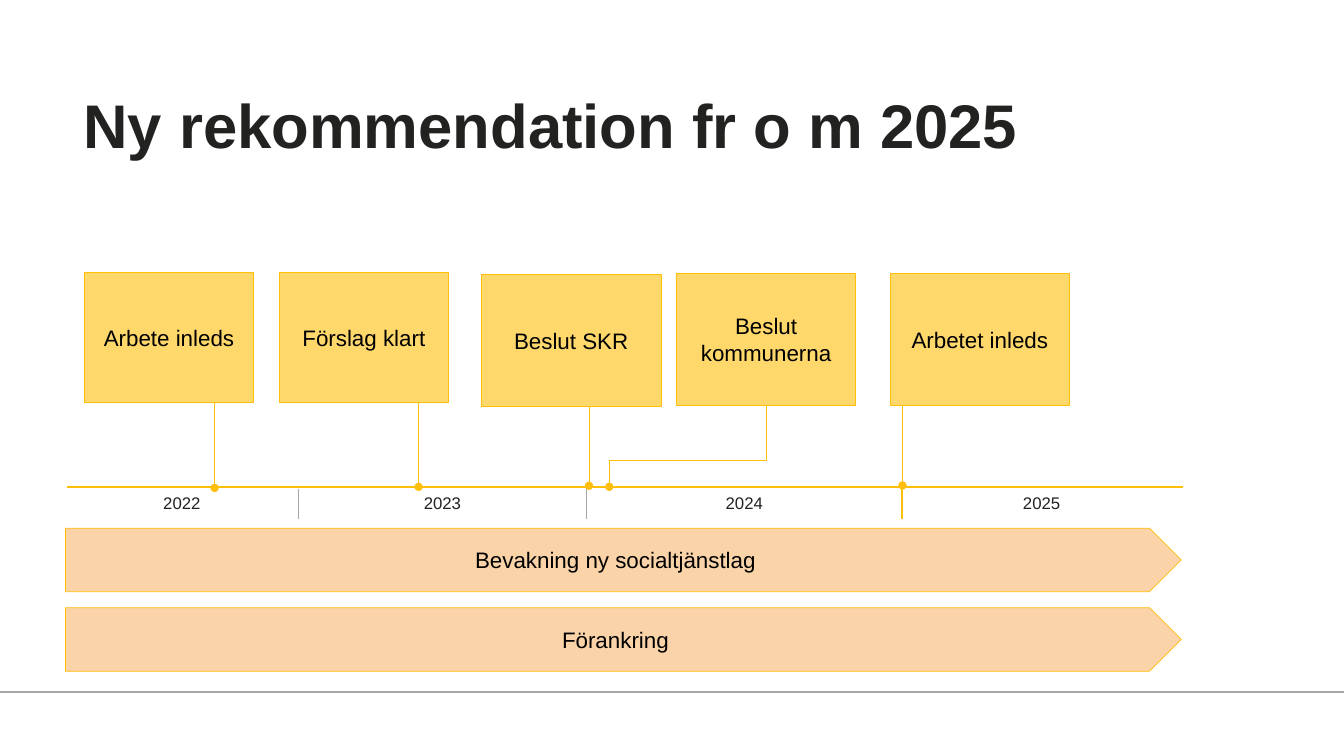
from lxml.etree import SubElement
from pptx import Presentation
from pptx.dml.color import RGBColor
from pptx.enum.shapes import MSO_CONNECTOR, MSO_SHAPE
from pptx.enum.text import MSO_ANCHOR, PP_ALIGN
from pptx.oxml.ns import qn
from pptx.util import Pt

COLORS = {
    "gold": "FFBE0A",
    "yellow": "FFD86C",
    "peach": "FAD4A8",
    "gray": "A6A6A6",
    "ink": "222221",
    "black": "000000",
}
PLAIN_TABLE = "{2D5ABB26-0587-4C30-8999-92F81FD0307C}"


def rgb(color):
    return RGBColor.from_string(COLORS[color])


class TimelineSlide:
    font = "Arial"

    def __init__(self, page):
        self.page = page

    def style(self, frame, size, color, align, bold=False):
        for para in frame.paragraphs:
            para.alignment = align
            for span in para.runs:
                span.font.name = self.font
                span.font.size = Pt(size)
                span.font.bold = bold
                span.font.color.rgb = rgb(color)

    def title(self, text, left, top, width, height):
        box = self.page.shapes.add_textbox(Pt(left), Pt(top), Pt(width), Pt(height))
        frame = box.text_frame
        frame.word_wrap = True
        frame.text = text
        frame.paragraphs[0].line_spacing = 0.8
        self.style(frame, 44, "ink", PP_ALIGN.LEFT, bold=True)

    def shape(self, kind, text, left, top, width, height, fill):
        shape = self.page.shapes.add_shape(kind, Pt(left), Pt(top), Pt(width), Pt(height))
        shape.shadow.inherit = False
        shape.fill.solid()
        shape.fill.fore_color.rgb = rgb(fill)
        shape.line.color.rgb = rgb("gold")
        shape.line.width = Pt(0.5)
        frame = shape.text_frame
        frame.word_wrap = True
        frame.vertical_anchor = MSO_ANCHOR.MIDDLE
        frame.text = text
        self.style(frame, 16, "black", PP_ALIGN.CENTER)

    def line(self, start, end, color="gold", weight=0.5, dot=False):
        line = self.page.shapes.add_connector(
            MSO_CONNECTOR.STRAIGHT, *(Pt(value) for value in (*start, *end)))
        line.line.color.rgb = rgb(color)
        line.line.width = Pt(weight)
        if dot:
            SubElement(line.line._get_or_add_ln(), qn("a:tailEnd"), type="oval")
        SubElement(line._element.spPr, qn("a:effectLst"))

    def cell_border(self, cell, side, color, weight):
        """Add one border; side is an XML tag such as a:lnR."""
        border = SubElement(cell._tc.get_or_add_tcPr(), qn(side), w=str(Pt(weight)))
        fill = SubElement(border, qn("a:solidFill"))
        SubElement(fill, qn("a:srgbClr"), val=COLORS[color])

    def year_table(self, years, widths, dividers, left, top, height):
        table = self.page.shapes.add_table(
            1, len(years), Pt(left), Pt(top), Pt(sum(widths)), Pt(height)).table
        table.first_row = table.horz_banding = False
        table._tbl.tblPr.find(qn("a:tableStyleId")).text = PLAIN_TABLE
        for index, (year, width) in enumerate(zip(years, widths)):
            table.columns[index].width = Pt(width)
            cell = table.cell(0, index)
            cell.text = year
            self.style(cell.text_frame, 12, "ink", PP_ALIGN.CENTER)
            if index > 0:
                self.cell_border(cell, "a:lnL", *dividers[index - 1])
            if index < len(dividers):
                self.cell_border(cell, "a:lnR", *dividers[index])
            cell.fill.background()


def main():
    deck = Presentation()
    deck.slide_width, deck.slide_height = Pt(960), Pt(540)
    slide = TimelineSlide(deck.slides.add_slide(deck.slide_layouts[6]))

    slide.line((0, 494.5), (960, 494.5), "gray", 1.5)
    slide.title("Ny rekommendation fr o m 2025", 52.5, 69, 757, 97)

    axis = 347.75
    slide.line((48, axis), (845, axis), weight=1.5)
    slide.year_table(
        ["2022", "2023", "2024", "2025"], [166.3, 205.9, 225.4, 199.4],
        [("gray", 0.5), ("gray", 0.5), ("gold", 1)], 46.8, 349.2, 21)

    for text, top in (("Bevakning ny socialtjänstlag", 377.3), ("Förankring", 434.1)):
        slide.shape(MSO_SHAPE.PENTAGON, text, 46.8, top, 797, 45.4, "peach")

    for x, end in ((153.3, 348.5), (299, axis), (420.7, 347), (644.6, 346.75)):
        slide.line((x, 278), (x, end), dot=True)

    bend_left, bend_right, bend = 435.2, 547.5, 329
    slide.line((bend_right, 289), (bend_right, bend))
    slide.line((bend_left, bend), (bend_right, bend))
    slide.line((bend_left, bend), (bend_left, axis), dot=True)

    small, large = (121, 93.2), (128.2, 94.3)
    milestones = [
        ("Arbete inleds", 60.2, 194.4, small),
        ("Förslag klart", 199.4, 194.6, small),
        ("Beslut SKR", 343.9, 195.8, large),
        ("Beslut kommunerna", 483.1, 195.2, large),
        ("Arbetet inleds", 635.8, 195.2, large),
    ]
    for text, left, top, size in milestones:
        slide.shape(MSO_SHAPE.RECTANGLE, text, left, top, *size, "yellow")

    deck.save("out.pptx")


if __name__ == "__main__":
    main()
